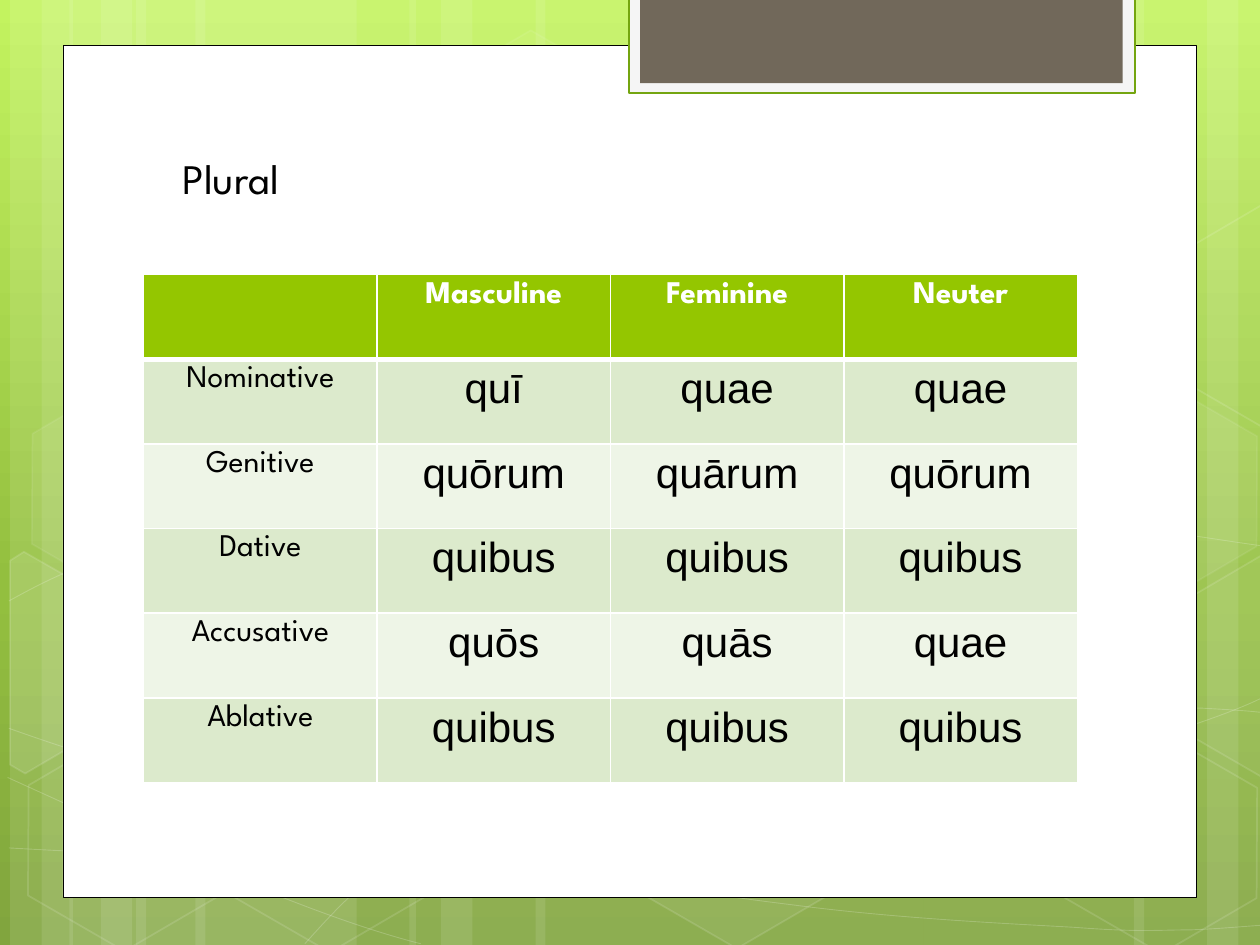
from copy import deepcopy

from lxml.etree import SubElement
from pptx import Presentation
from pptx.dml.color import RGBColor
from pptx.enum.shapes import MSO_SHAPE
from pptx.enum.text import PP_ALIGN
from pptx.oxml import parse_xml
from pptx.oxml.ns import nsdecls, qn
from pptx.util import Inches, Pt

# Content
TITLE = "Plural"
DECLENSION = [
    ("", "Masculine", "Feminine", "Neuter"),
    ("Nominative", "quī", "quae", "quae"),
    ("Genitive", "quōrum", "quārum", "quōrum"),
    ("Dative", "quibus", "quibus", "quibus"),
    ("Accusative", "quōs", "quās", "quae"),
    ("Ablative", "quibus", "quibus", "quibus"),
]
HEADING_FONT, FORM_FONT = "League Spartan", "Arial"
WHITE, BLACK = "FFFFFF", "000000"
HEADER_FILL, ROW_FILLS = "94C600", ("DCEACC", "EEF5E7")

# Backdrop
GRADIENT = [(0, "C3F35F"), (0.62, "93BF3F"), (1, "81A53E")]
BANDS = [  # left, width
    (1.08, 1.75), (0.08, 0.5), (0.33, 0.83), (1.55, 1.75), (0.55, 0.5), (0.8, 0.83),
    (7.33, 1.75), (9.58, 0.5), (9, 0.83), (4.25, 3.08), (3.25, 0.5), (3.5, 0.83),
]
CURVES = [  # start point, then two control points and an end point per segment
    [(0.07, 6.73), (0.61, 6.76), (1.15, 6.79), (1.9, 6.78), (2.65, 6.77), (3.58, 6.75),
     (4.58, 6.65), (5.58, 6.55), (7, 6.36), (7.92, 6.17), (8.83, 5.98), (9.77, 5.68),
     (10.07, 5.51)],
    [(0.07, 4.77), (0.36, 4.61), (0.65, 4.46), (1.21, 4.31), (1.78, 4.16), (2.59, 3.94),
     (3.47, 3.87), (4.36, 3.8), (5.44, 3.79), (6.54, 3.87), (7.64, 3.95), (9.47, 4.26),
     (10.07, 4.34)],
    [(0.06, 6.17), (1.27, 6.72), (2.47, 7.27), (3.34, 7.49)],
    [(0.07, 5.78), (0.38, 5.89), (0.7, 6), (1.28, 6.16), (1.86, 6.31), (2.73, 6.56),
     (3.57, 6.73), (4.4, 6.9), (5.45, 7.08), (6.28, 7.18), (7.11, 7.29), (8, 7.33),
     (8.53, 7.36), (9.05, 7.4), (9.19, 7.38), (9.45, 7.38), (9.71, 7.37), (9.89, 7.35),
     (10.07, 7.34)],
    [(2.42, 7.49), (2.6, 7.29), (2.78, 7.09), (3.02, 6.91), (3.26, 6.73), (3.6, 6.53),
     (3.88, 6.39), (4.16, 6.25), (4.33, 6.19), (4.7, 6.09), (5.06, 5.99), (5.73, 5.85),
     (6.08, 5.78), (6.44, 5.71), (6.49, 5.71), (6.8, 5.69), (7.11, 5.66), (7.6, 5.63),
     (7.94, 5.62), (8.29, 5.61), (8.86, 5.62), (8.86, 5.62), (9.08, 5.62), (9.31, 5.62),
     (9.53, 5.62), (9.71, 5.63), (9.88, 5.64), (9.97, 5.65), (10.06, 5.66), (10.03, 5.65),
     (10.06, 5.66)],
]
HEXAGONS = [  # left, top, fill opacity %, line opacity %
    (3.34, 0.36, 4, 8), (4.97, 5.89, 6, 12), (0.11, 5.91, 0, 12), (0.14, 3.12, 7, 8),
    (1.74, 5.92, 0, 12), (7.53, 4.53, 10, 12), (8.34, 5.93, 0, 12), (8.34, 3.14, 7, 8),
]
CUT_HEXAGONS = [  # outline, fill opacity %
    ([(0.08, 4.45), (0.19, 4.38), (0.96, 4.82), (0.95, 5.7), (0.2, 6.14), (0.08, 6.07)], 10),
    ([(9.26, 4.85), (10.01, 4.41), (10.09, 4.46), (10.09, 6.13), (10.02, 6.17), (9.26, 5.73)], 4),
    ([(9.26, 2.07), (10.01, 1.63), (10.1, 1.68), (10.09, 3.35), (10.02, 3.39), (9.26, 2.95)], 0),
]
PANELS = [  # box, fill, line colour, line width
    ((0.5, 0.36, 9, 6.76), WHITE, BLACK, 0.5),
    ((4.99, -0.02, 4.02, 0.76), "F5F5F5", "74A510", 1.25),
    ((5.08, -0.02, 3.83, 0.68), "71685A", None, 0),
]


def rgb(color):
    return RGBColor.from_string(color)


def paint(fill, parent, color, opacity):
    """Solid fill; parent is the XML element that holds it."""
    if not opacity:
        fill.background()
        return
    fill.solid()
    fill.fore_color.rgb = rgb(color)
    if opacity < 100:
        srgb = parent.find(qn("a:solidFill")).find(qn("a:srgbClr"))
        SubElement(srgb, qn("a:alpha")).set("val", str(opacity * 1000))


def style(shape, fill=WHITE, fill_opacity=100, line=WHITE, width=1, line_opacity=100):
    shape.shadow.inherit = False
    properties = shape._element.spPr
    paint(shape.fill, properties, fill, fill_opacity)
    shape.line.width = Pt(width)
    paint(shape.line.fill, properties.find(qn("a:ln")), line, line_opacity)


def add_preset(slide, preset, box):
    return slide.shapes.add_shape(preset, *map(Inches, box))


def add_outline(slide, points, close):
    start, *rest = [(Inches(x), Inches(y)) for x, y in points]
    builder = slide.shapes.build_freeform(*start)
    builder.add_line_segments(rest, close=close)
    return builder.convert_to_shape()


def bend(shape):
    """Turn each three straight segments into one cubic curve."""
    lines = list(shape._element.iter(qn("a:lnTo")))
    path_element = lines[0].getparent()
    for i in range(0, len(lines), 3):
        curve = SubElement(path_element, qn("a:cubicBezTo"))
        for line in lines[i:i + 3]:
            curve.append(line[0])
            path_element.remove(line)


def write(paragraph, text, font, size, color, bold=False):
    paragraph.text = text
    for run in paragraph.runs:
        run.font.name, run.font.size, run.font.bold = font, Pt(size), bold
        run.font.color.rgb = rgb(color)


def add_borders(cell, bottom):
    properties = cell._tc.get_or_add_tcPr()
    for i, (side, width) in enumerate((("L", 1), ("R", 1), ("T", 1), ("B", bottom))):
        properties.insert(i, parse_xml(
            f'<a:ln{side} {nsdecls("a")} w="{Pt(width)}"><a:solidFill>'
            f'<a:srgbClr val="{WHITE}"/></a:solidFill></a:ln{side}>'))


def draw_backdrop(slide):
    fill = slide.background.fill
    fill.gradient()
    fill.gradient_angle = 270
    first_stop = next(slide._element.iter(qn("a:gs")))
    first_stop.addnext(deepcopy(first_stop))
    for stop, (position, color) in zip(fill.gradient_stops, GRADIENT):
        stop.position = position
        stop.color.rgb = rgb(color)

    for left, width in BANDS:
        band = add_preset(slide, MSO_SHAPE.RECTANGLE, (left, 0, width, 7.5))
        style(band, fill_opacity=10, line_opacity=0)
    for points in CURVES:
        curve = add_outline(slide, points, close=False)
        bend(curve)
        style(curve, fill_opacity=0, width=0.5, line_opacity=20)
    for left, top, fill_opacity, line_opacity in HEXAGONS:
        hexagon = add_preset(slide, MSO_SHAPE.HEXAGON, (left, top, 1.75, 1.52))
        hexagon.adjustments[0] = 0.285
        hexagon.rotation = 30
        style(hexagon, fill_opacity=fill_opacity, line_opacity=line_opacity)
    for points, opacity in CUT_HEXAGONS:
        style(add_outline(slide, points, close=True), fill_opacity=opacity, line_opacity=12)
    for box, color, line, width in PANELS:
        panel = add_preset(slide, MSO_SHAPE.RECTANGLE, box)
        style(panel, color, 100, line, width, 100 if line else 0)


def draw_declension(slide):
    row_count, column_count = len(DECLENSION), len(DECLENSION[0])
    table = slide.shapes.add_table(
        row_count, column_count, Inches(1.14), Inches(2.18), Inches(7.41), Inches(4.03)).table
    for r, row in enumerate(DECLENSION):
        header = r == 0
        for c, text in enumerate(row):
            cell = table.cell(r, c)
            cell.fill.solid()
            cell.fill.fore_color.rgb = rgb(HEADER_FILL if header else ROW_FILLS[(r - 1) % 2])
            add_borders(cell, bottom=3 if header else 1)
            font, size = (HEADING_FONT, 18) if header or c == 0 else (FORM_FONT, 24)
            paragraph = cell.text_frame.paragraphs[0]
            write(paragraph, text, font, size, WHITE if header else BLACK, bold=header)
            paragraph.alignment = PP_ALIGN.CENTER


def main():
    presentation = Presentation()
    presentation.slide_width, presentation.slide_height = Inches(10), Inches(7.5)
    slide = presentation.slides.add_slide(presentation.slide_layouts[6])
    draw_backdrop(slide)
    draw_declension(slide)
    # Title
    title = slide.shapes.add_textbox(Inches(1.35), Inches(1.16), Inches(2.64), Inches(0.5))
    title.text_frame.word_wrap = True
    write(title.text_frame.paragraphs[0], TITLE, HEADING_FONT, 24, BLACK)
    presentation.save("out.pptx")


if __name__ == "__main__":
    main()
